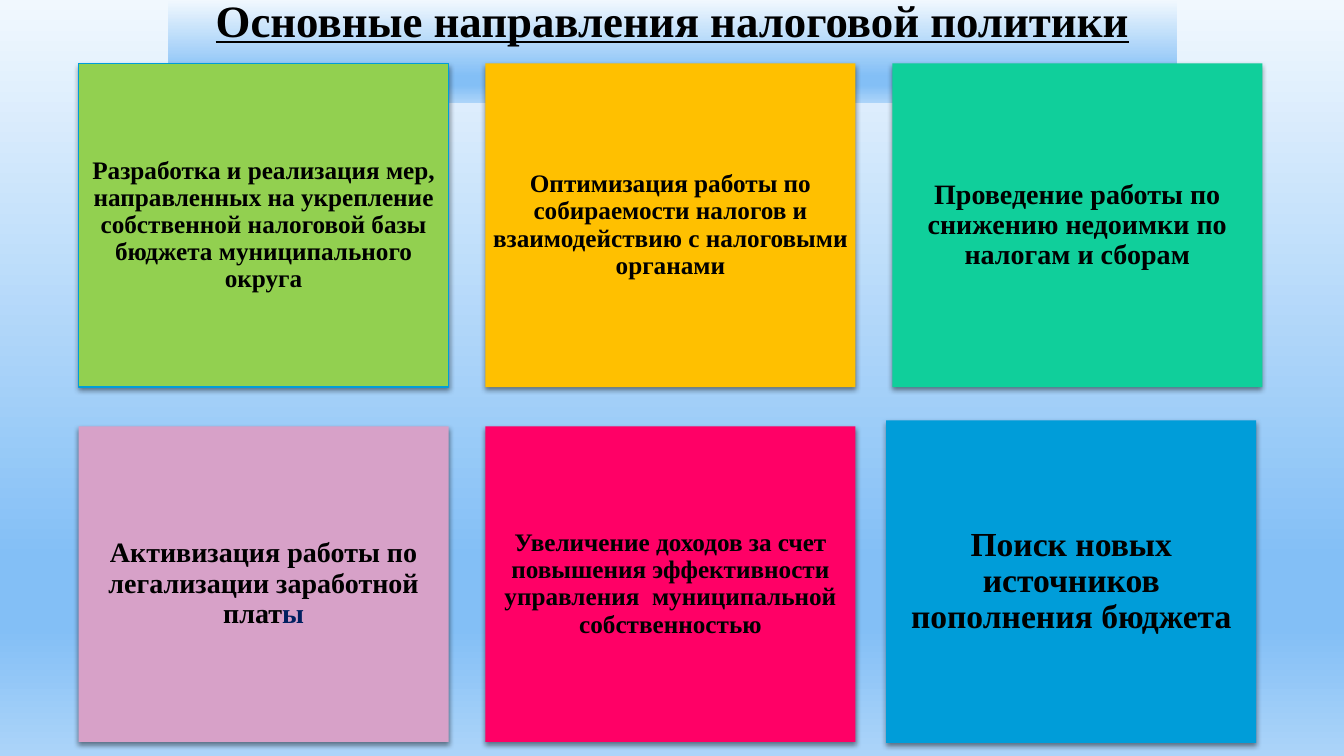
from lxml import etree
from pptx import Presentation
from pptx.dml.color import RGBColor
from pptx.enum.shapes import MSO_SHAPE
from pptx.enum.text import MSO_ANCHOR, MSO_AUTO_SIZE, PP_ALIGN
from pptx.oxml.ns import qn
from pptx.util import Inches, Pt

RECTANGLE = MSO_SHAPE.RECTANGLE
MIDDLE, BOTTOM = MSO_ANCHOR.MIDDLE, MSO_ANCHOR.BOTTOM
CENTER = PP_ALIGN.CENTER
NO_AUTOFIT = MSO_AUTO_SIZE.NONE

FONT = "Times New Roman"
BLACK = RGBColor(0x00, 0x00, 0x00)
NAVY = RGBColor(0x00, 0x20, 0x60)
GREEN = RGBColor(0x92, 0xD0, 0x50)
AMBER = RGBColor(0xFF, 0xC0, 0x00)
TEAL = RGBColor(0x10, 0xCF, 0x9B)
MAUVE = RGBColor(0xD7, 0xA1, 0xC8)
PINK = RGBColor(0xFF, 0x00, 0x66)
BLUE = RGBColor(0x00, 0x9D, 0xD9)
SKY_STOPS = [
    (0, RGBColor(0xF1, 0xF8, 0xFE)),
    (74, RGBColor(0x83, 0xBF, 0xF6)),
    (83, RGBColor(0x83, 0xBF, 0xF6)),
    (100, RGBColor(0xAC, 0xD4, 0xF9)),
]

CARD_WIDTH = 3.67
TOP_ROW = (0.63, 3.21)
BOTTOM_ROW = (4.23, 3.13)
COLUMNS = [0.78 + column * 4.035 for column in range(3)]


class SlideBuilder:
    def __init__(self, slide):
        self.slide = slide

    def sky_gradient(self, fill, element):
        """Fill with the vertical sky gradient; element holds the fill's XML."""
        fill.gradient()
        fill.gradient_angle = 270
        stops = element.find(".//" + qn("a:gsLst"))
        for stop in list(stops):
            stops.remove(stop)
        for position, color in SKY_STOPS:
            stop = etree.SubElement(stops, qn("a:gs"), pos=str(position * 1000))
            etree.SubElement(stop, qn("a:srgbClr"), val=str(color))

    def background(self):
        self.sky_gradient(self.slide.background.fill, self.slide.element)

    def format_run(self, run, size, color=BLACK):
        run.font.name = FONT
        run.font.size = Pt(size)
        run.font.bold = True
        run.font.color.rgb = color

    def title(self, text):
        title = self.slide.shapes.title
        title.left, title.top = Inches(1.67), Inches(0)
        title.width, title.height = Inches(10), Inches(1.02)
        self.sky_gradient(title.fill, title.element)
        frame = title.text_frame
        frame.text = text
        frame.word_wrap = True
        frame.auto_size = NO_AUTOFIT
        frame.vertical_anchor = BOTTOM
        frame.margin_top = Inches(0)
        frame.margin_bottom = Inches(0.56)
        paragraph = frame.paragraphs[0]
        paragraph.alignment = CENTER
        self.format_run(paragraph.runs[0], 32)
        paragraph.runs[0].font.underline = True

    def shadow(self, shape):
        shape.shadow.inherit = False
        effects = shape.element.spPr.find(qn("a:effectLst"))
        shadow = etree.SubElement(
            effects, qn("a:outerShdw"), blurRad=str(Pt(4)), dist=str(Pt(2)),
            dir="5400000", algn="ctr", rotWithShape="0")
        color = etree.SubElement(shadow, qn("a:srgbClr"), val=str(BLACK))
        etree.SubElement(color, qn("a:alpha"), val="45000")

    def card(self, left, top, height, color, size, text, ending="", outline=None):
        """Add a coloured card; ending is a navy tail of the text."""
        card = self.slide.shapes.add_shape(
            RECTANGLE, Inches(left), Inches(top), Inches(CARD_WIDTH), Inches(height))
        card.fill.solid()
        card.fill.fore_color.rgb = color
        if outline is None:
            card.line.fill.background()
        else:
            card.line.color.rgb = outline
            card.line.width = Pt(0.75)
        self.shadow(card)
        frame = card.text_frame
        frame.word_wrap = True
        frame.vertical_anchor = MIDDLE
        margin = Inches(0.1 * size / 24)
        frame.margin_left = frame.margin_right = margin
        frame.margin_top = frame.margin_bottom = margin
        frame.text = text
        paragraph = frame.paragraphs[0]
        paragraph.alignment = CENTER
        paragraph.line_spacing = 0.9
        self.format_run(paragraph.runs[0], size)
        if ending:
            run = paragraph.add_run()
            run.text = ending
            self.format_run(run, size, NAVY)


def main():
    presentation = Presentation()
    presentation.slide_width = Inches(13.33)
    presentation.slide_height = Inches(7.5)
    title_only = presentation.slide_layouts[5]
    builder = SlideBuilder(presentation.slides.add_slide(title_only))
    builder.background()
    builder.title("Основные направления налоговой политики")

    left, center, right = COLUMNS
    builder.card(left, *TOP_ROW, GREEN, 18,
                 "Разработка и реализация мер, направленных на укрепление "
                 "собственной налоговой базы бюджета муниципального округа",
                 outline=BLUE)
    builder.card(center, *TOP_ROW, AMBER, 18,
                 "Оптимизация работы по собираемости налогов и "
                 "взаимодействию с налоговыми органами")
    builder.card(right, *TOP_ROW, TEAL, 20,
                 "Проведение работы по снижению недоимки по налогам и сборам")
    builder.card(left, *BOTTOM_ROW, MAUVE, 20,
                 "Активизация работы по легализации заработной плат", ending="ы")
    builder.card(center, *BOTTOM_ROW, PINK, 18,
                 "Увеличение доходов за счет повышения эффективности "
                 "управления  муниципальной собственностью")
    builder.card(8.79, 4.17, 3.2, BLUE, 24,
                 "Поиск новых источников пополнения бюджета")
    presentation.save("out.pptx")


if __name__ == "__main__":
    main()
